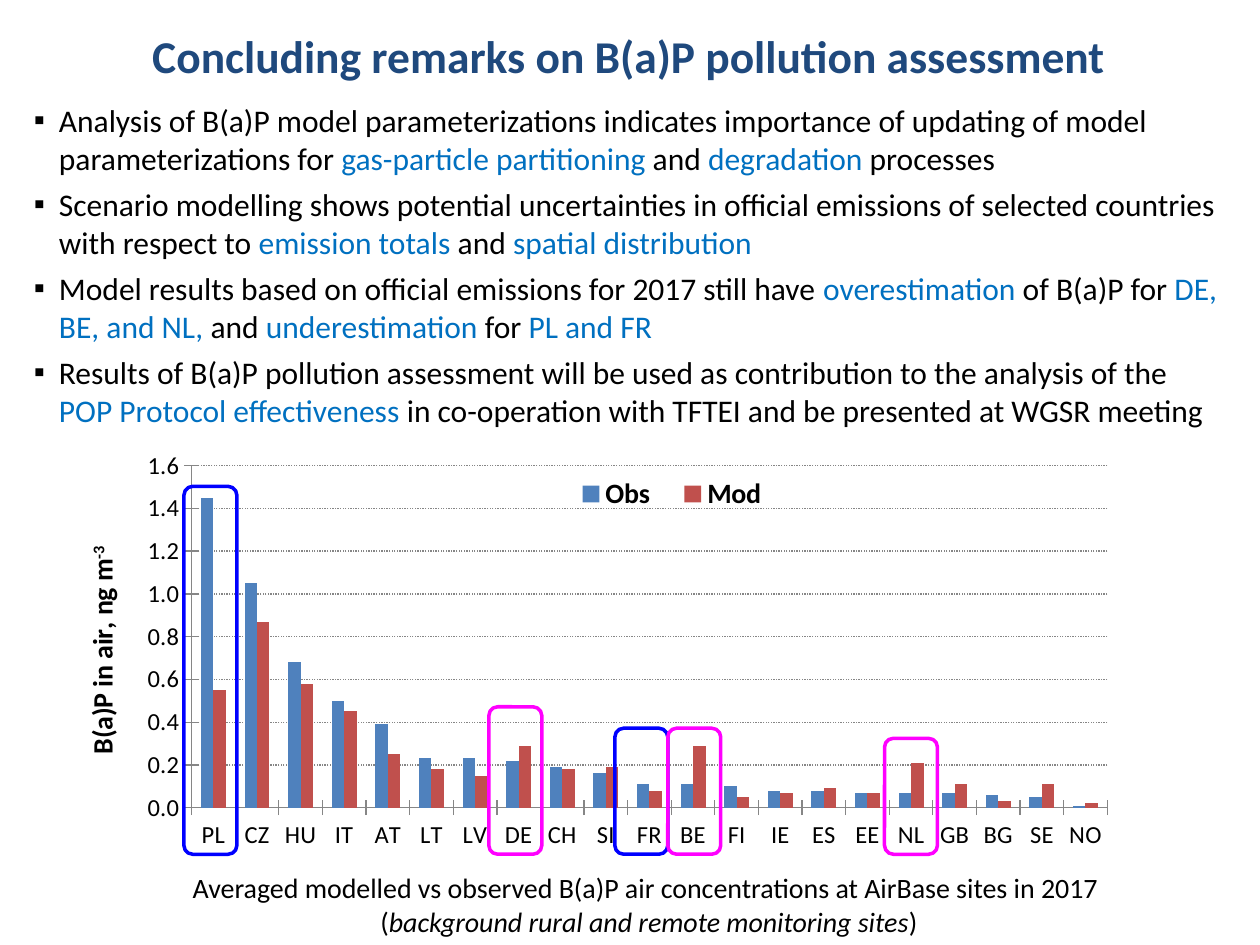
from lxml.etree import SubElement
from pptx import Presentation
from pptx.chart.data import CategoryChartData
from pptx.dml.color import RGBColor
from pptx.enum.chart import XL_CHART_TYPE, XL_LEGEND_POSITION, XL_TICK_MARK
from pptx.enum.dml import MSO_LINE
from pptx.enum.shapes import MSO_SHAPE
from pptx.enum.text import MSO_AUTO_SIZE, PP_ALIGN
from pptx.oxml import parse_xml
from pptx.oxml.ns import nsdecls, qn
from pptx.util import Inches, Pt

FONT = "Calibri"
BLACK = RGBColor(0x00, 0x00, 0x00)
NAVY = RGBColor(0x1F, 0x49, 0x7D)
ACCENT = RGBColor(0x00, 0x70, 0xC0)
AXIS_GREY = RGBColor(0x86, 0x86, 0x86)
OBS_BLUE = RGBColor(0x4F, 0x81, 0xBD)
MOD_RED = RGBColor(0xC0, 0x50, 0x4D)
UNDER_BLUE = RGBColor(0x00, 0x00, 0xFF)
OVER_MAGENTA = RGBColor(0xFF, 0x00, 0xFF)

REMARKS_LEFT, REMARKS_TOP, REMARKS_PITCH = 0.17, 0.75, 0.667
REMARKS_WIDTH, REMARKS_HEIGHT = 9.67, 0.71
FRAME_WIDTH, FRAME_BOTTOM = 0.42, 6.78

# Asterisks enclose the emphasised parts.
REMARKS = [
    "Analysis of B(a)P model parameterizations indicates importance of updating of model "
    "parameterizations for *gas-particle partitioning* and *degradation* processes",
    "Scenario modelling shows potential uncertainties in official emissions of selected "
    "countries with respect to *emission totals *and *spatial distribution*",
    "Model results based on official emissions for 2017 still have *overestimation* of "
    "B(a)P for *DE, BE, and NL, *and *underestimation* for *PL and FR*",
    "Results of B(a)P pollution assessment will be used as contribution to the analysis of "
    "the *POP Protocol effectiveness* in co-operation with TFTEI and be presented at WGSR meeting",
]
CAPTION = ("Averaged modelled vs observed B(a)P air concentrations at AirBase sites in 2017 "
           "\v(*background rural and remote monitoring sites*)")

COUNTRIES = "PL CZ HU IT AT LT LV DE CH SI FR BE FI IE ES EE NL GB BG SE NO".split()
OBSERVED = [1.45, 1.05, 0.68, 0.5, 0.39, 0.23, 0.23, 0.22, 0.19, 0.16, 0.11,
            0.11, 0.1, 0.08, 0.08, 0.07, 0.07, 0.07, 0.06, 0.05, 0.01]
MODELLED = [0.55, 0.87, 0.58, 0.45, 0.25, 0.18, 0.15, 0.29, 0.18, 0.19, 0.08,
            0.29, 0.05, 0.07, 0.09, 0.07, 0.21, 0.11, 0.03, 0.11, 0.02]

# Left edge, top edge and colour of each highlighted country
FRAMES = [
    (1.46, 3.86, UNDER_BLUE),    # PL
    (4.88, 5.78, UNDER_BLUE),    # FR
    (3.88, 5.61, OVER_MAGENTA),  # DE
    (5.30, 5.78, OVER_MAGENTA),  # BE
    (7.02, 5.86, OVER_MAGENTA),  # NL
]


def style_font(font, size, color=BLACK, bold=False):
    font.name = FONT
    font.size = Pt(size)
    font.bold = bold
    font.color.rgb = color


def add_text(slide, box, marked_text, size, color=BLACK, bold=False, wrap=True):
    """Add a one-paragraph text box; return the paragraph and its emphasised runs."""
    frame = slide.shapes.add_textbox(*map(Inches, box)).text_frame
    frame.word_wrap = wrap
    frame.auto_size = MSO_AUTO_SIZE.SHAPE_TO_FIT_TEXT
    paragraph = frame.paragraphs[0]
    first, *rest = marked_text.split("*")
    paragraph.text = first
    emphasised = []
    for index, part in enumerate(rest):
        if part:
            run = paragraph.add_run()
            run.text = part
            if index % 2 == 0:
                emphasised.append(run)
    for run in paragraph.runs:
        style_font(run.font, size, color, bold)
    return paragraph, emphasised


def add_centred_text(slide, box, marked_text, size, **style):
    paragraph, emphasised = add_text(slide, box, marked_text, size, **style)
    paragraph.alignment = PP_ALIGN.CENTER
    for run in emphasised:
        run.font.italic = True


def add_remark(slide, row, remark):
    top = REMARKS_TOP + row * REMARKS_PITCH
    box = (REMARKS_LEFT, top, REMARKS_WIDTH, REMARKS_HEIGHT)
    paragraph, emphasised = add_text(slide, box, remark, 18)
    for run in emphasised:
        run.font.color.rgb = ACCENT
    properties = paragraph._p.get_or_add_pPr()
    properties.set("marL", str(Inches(0.2)))
    properties.set("indent", str(-Inches(0.2)))
    SubElement(properties, qn("a:buFont")).set("typeface", "Arial")
    SubElement(properties, qn("a:buChar")).set("char", "▪")


def set_layout(element, x, y, width, height, inner=False):
    """Place a chart part by shares of the chart's size."""
    target = '<c:layoutTarget val="inner"/>' if inner else ""
    layout = parse_xml(
        f'<c:layout {nsdecls("c")}><c:manualLayout>{target}'
        '<c:xMode val="edge"/><c:yMode val="edge"/>'
        f'<c:x val="{x}"/><c:y val="{y}"/><c:w val="{width}"/><c:h val="{height}"/>'
        '</c:manualLayout></c:layout>')
    for old in element.findall(qn("c:layout")):
        element.remove(old)
    element.insert(1 if element.tag == qn("c:legend") else 0, layout)


def style_axes(chart):
    for axis in (chart.category_axis, chart.value_axis):
        axis.major_tick_mark = XL_TICK_MARK.CROSS
        axis.minor_tick_mark = XL_TICK_MARK.NONE
        axis.format.line.color.rgb = AXIS_GREY
        style_font(axis.tick_labels.font, 14)

    values = chart.value_axis
    values.minimum_scale, values.maximum_scale, values.major_unit = 0, 1.6, 0.2
    values.tick_labels.number_format = "#,##0.0"
    values.tick_labels.number_format_is_linked = False
    values.major_gridlines.format.line.color.rgb = AXIS_GREY
    values.major_gridlines.format.line.width = Pt(0.75)
    values.major_gridlines.format.line.dash_style = MSO_LINE.ROUND_DOT

    title = values.axis_title.text_frame
    title.text = "B(a)P in air, ng m"
    exponent = title.paragraphs[0].add_run()
    exponent.text = "-3"
    for run in title.paragraphs[0].runs:
        style_font(run.font, 16, bold=True)
    exponent.font._element.set("baseline", "30000")
    title._txBody.bodyPr.set("rot", "-5400000")
    title._txBody.bodyPr.set("vert", "horz")


def add_concentration_chart(slide):
    data = CategoryChartData()
    data.categories = COUNTRIES
    data.add_series("Obs", OBSERVED)
    data.add_series("Mod", MODELLED)
    box = map(Inches, (0.63, 3.53, 8.25, 3.26))
    chart = slide.shapes.add_chart(XL_CHART_TYPE.COLUMN_CLUSTERED, *box, data).chart
    chart.has_title = False
    style_font(chart.font, 14)

    plot = chart.plots[0]
    plot.vary_by_categories = False
    plot.gap_width = 150
    for series, color in zip(plot.series, (OBS_BLUE, MOD_RED)):
        series.format.fill.solid()
        series.format.fill.fore_color.rgb = color
    style_axes(chart)

    chart.has_legend = True
    legend = chart.legend
    legend.position = XL_LEGEND_POSITION.RIGHT
    legend.include_in_layout = False
    style_font(legend.font, 16, bold=True)
    set_layout(legend._element, 0.46, 0.06, 0.22, 0.12)
    set_layout(chart._chartSpace.chart.plotArea, 0.108, 0.051, 0.881, 0.833, inner=True)


def add_country_frame(slide, left, top, color):
    box = map(Inches, (left, top, FRAME_WIDTH, FRAME_BOTTOM - top))
    frame = slide.shapes.add_shape(MSO_SHAPE.ROUNDED_RECTANGLE, *box)
    frame.shadow.inherit = False
    frame.fill.background()
    frame.line.color.rgb = color
    frame.line.width = Pt(2)


def main():
    deck = Presentation()
    deck.slide_width, deck.slide_height = Inches(10), Inches(7.5)
    slide = deck.slides.add_slide(deck.slide_layouts[6])

    add_centred_text(slide, (0.08, 0.17, 9.83, 0.53),
                     "Concluding remarks on B(a)P pollution assessment",
                     26, color=NAVY, bold=True)
    add_concentration_chart(slide)
    add_centred_text(slide, (1.38, 6.86, 7.54, 0.64), CAPTION, 16, wrap=False)
    for country_frame in FRAMES:
        add_country_frame(slide, *country_frame)
    for row, remark in enumerate(REMARKS):
        add_remark(slide, row, remark)

    deck.save("out.pptx")


if __name__ == "__main__":
    main()
